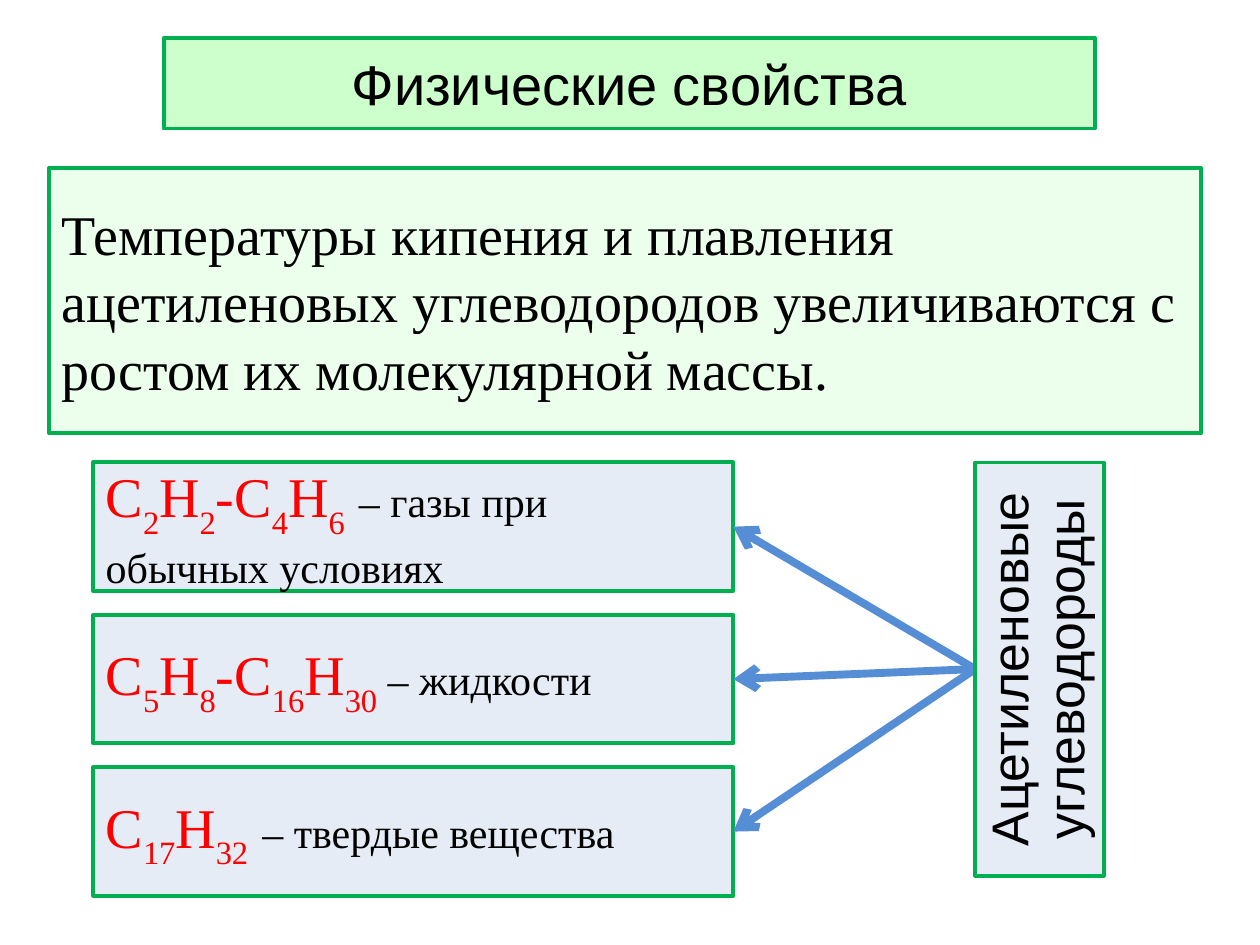
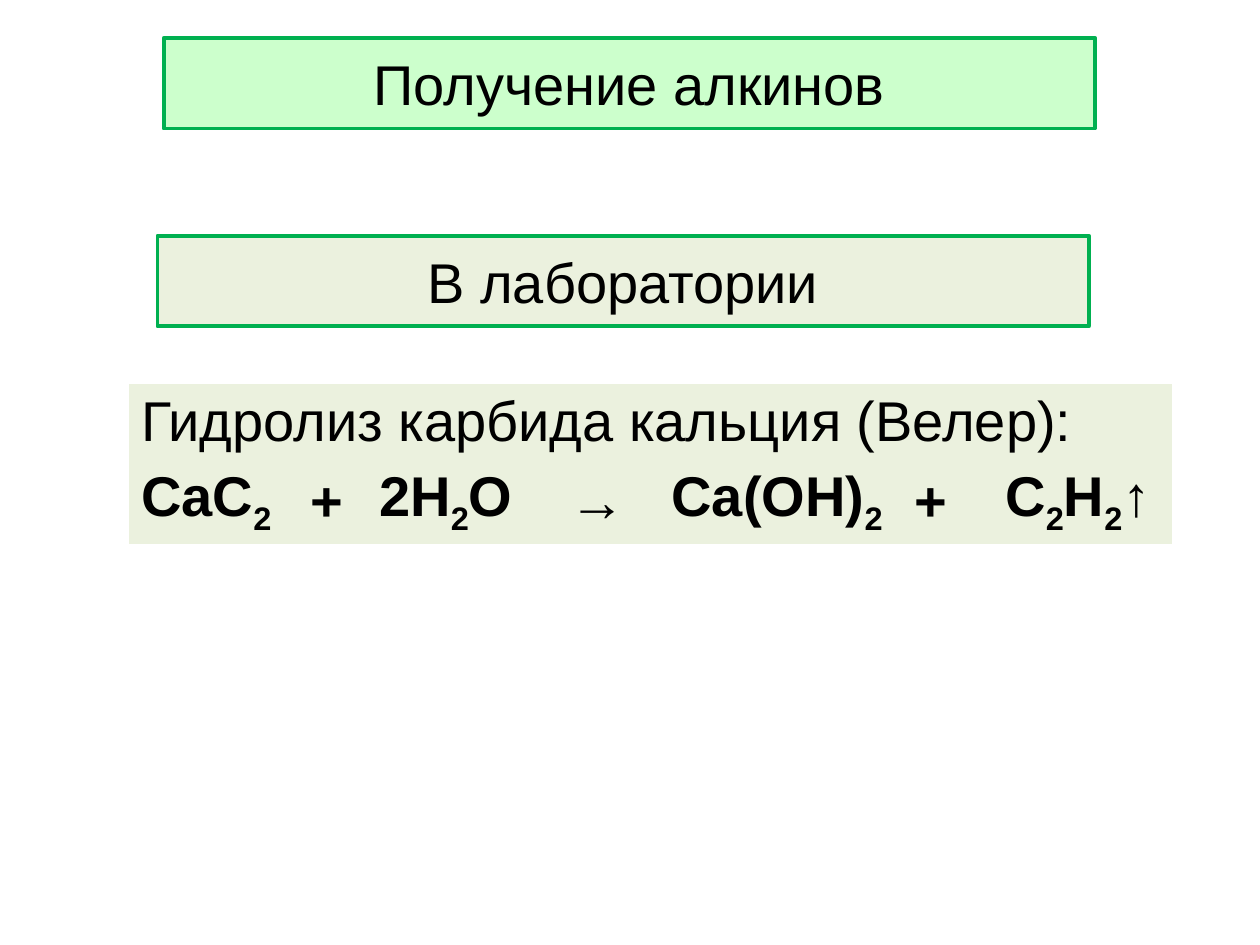
"""Builds two chemistry slides: physical properties and preparation of alkynes."""
from lxml.etree import SubElement
from pptx import Presentation
from pptx.dml.color import RGBColor
from pptx.enum.shapes import MSO_CONNECTOR, MSO_SHAPE
from pptx.enum.text import MSO_ANCHOR, MSO_AUTO_SIZE, PP_ALIGN
from pptx.oxml.ns import qn
from pptx.util import Inches, Pt

COLORS = {
    "text": "000000", "formula": "FF0000", "border": "00B050", "title": "CCFFCC",
    "state": "B9CDE5", "lab": "EBF1DE", "arrow": "558ED5",
}
SANS, SERIF = "Arial", "Times New Roman"
LEFT, CENTER = PP_ALIGN.LEFT, PP_ALIGN.CENTER
NO_GRID_STYLE = "{2D5ABB26-0587-4C30-8999-92F81FD0307C}"

TITLE_BOX = (1.3, 0.3, 7.39, 0.72)
PROPERTIES_TITLE = "Физические свойства"
TREND = "Температуры кипения и плавления ацетиленовых углеводородов увеличиваются с ростом их молекулярной массы."
TREND_BOX = (0.39, 1.33, 9.14, 2.11)

# Underscores enclose subscripts.
STATES = [
    ("С_2_Н_2_-С_4_Н_6_ ", "– газы при обычных условиях"),
    ("С_5_Н_8_-С_16_Н_30_", " – жидкости"),
    ("С_17_Н_32_ ", "– твердые вещества"),
]
STATE_LEFT, STATE_TOP, STATE_WIDTH, STATE_HEIGHT = 0.74, 3.67, 5.08, 1.02
STATE_PITCH, STATE_MARGIN = 1.21, 0.2
FAMILY = "Ацетиленовые углеводороды"
FAMILY_BOX = (6.61, 4.8, 3.28, 1.02)

PREPARATION_TITLE = "Получение алкинов"
LAB = "В лаборатории"
LAB_BOX = (1.25, 1.87, 7.39, 0.72)
METHOD = "Гидролиз карбида кальция (Велер):"
REACTION = [
    ("СaC_2_", 1.26, LEFT), ("+", 0.63, CENTER), ("2H_2_O", 1.34, LEFT),
    ("→", 0.98, CENTER), ("Ca(OH)_2_", 1.93, LEFT), ("+", 0.72, LEFT),
    ("C_2_H_2_", 1.42, LEFT),
]
GAS_SIGN = "↑"
REACTION_LEFT, REACTION_TOP, REACTION_ROW = 1.02, 3.05, 0.47


def rgb(name):
    return RGBColor.from_string(COLORS[name])


def paint(fill, color, opacity=100):
    fill.solid()
    fill.fore_color.rgb = rgb(color)
    if opacity < 100:
        tint = fill._xPr.find(qn("a:solidFill"))[0]
        SubElement(tint, qn("a:alpha"), val=str(opacity * 1000))


def write(paragraph, marked, size=32, font=SANS, color="text", bold=False, drop=30):
    for index, piece in enumerate(marked.split("_")):
        if not piece:
            continue
        run = paragraph.add_run()
        run.text = piece
        look = {"size": Pt(size), "name": font, "bold": bold}
        for attribute, value in look.items():
            setattr(run.font, attribute, value)
        run.font.color.rgb = rgb(color)
        if index % 2:
            run._r.get_or_add_rPr().set("baseline", str(-drop * 1000))


def frame(shape, color, opacity=100, align=LEFT, spacing=1.0, margin=0.1):
    paint(shape.fill, color, opacity)
    shape.line.color.rgb = rgb("border")
    shape.line.width = Pt(2.25)
    layout = {
        "word_wrap": True, "auto_size": MSO_AUTO_SIZE.NONE,
        "vertical_anchor": MSO_ANCHOR.MIDDLE, "margin_right": Inches(margin),
    }
    for attribute, value in layout.items():
        setattr(shape.text_frame, attribute, value)
    paragraph = shape.text_frame.paragraphs[0]
    paragraph.alignment = align
    paragraph.line_spacing = spacing
    return paragraph


def add_box(slide, box, color, **options):
    shape = slide.shapes.add_shape(MSO_SHAPE.RECTANGLE, *map(Inches, box))
    shape.shadow.inherit = False
    return shape, frame(shape, color, **options)


def add_titled_slide(deck, heading):
    slide = deck.slides.add_slide(deck.slide_layouts[5])
    title = slide.shapes.title
    for side, length in zip(("left", "top", "width", "height"), TITLE_BOX):
        setattr(title, side, Inches(length))
    write(frame(title, "title", align=CENTER), heading)
    return slide


def add_arrow(slide, start, end):
    arrow = slide.shapes.add_connector(MSO_CONNECTOR.STRAIGHT, *map(Inches, start + end))
    arrow.line.color.rgb = rgb("arrow")
    arrow.line.width = Pt(4.5)
    SubElement(arrow.line._get_or_add_ln(), qn("a:tailEnd"), type="arrow")
    SubElement(arrow._element.spPr, qn("a:effectLst"))


def build_properties(deck):
    slide = add_titled_slide(deck, PROPERTIES_TITLE)
    _, trend = add_box(slide, TREND_BOX, "title", opacity=36)
    write(trend, TREND, font=SERIF)

    left, top, width, height = FAMILY_BOX
    hub = (left + (width - height) / 2, top + height / 2)
    for row, (formula, state) in enumerate(STATES):
        state_top = STATE_TOP + row * STATE_PITCH
        box = (STATE_LEFT, state_top, STATE_WIDTH, STATE_HEIGHT)
        _, line = add_box(slide, box, "state", opacity=36, margin=STATE_MARGIN)
        write(line, formula, font=SERIF, color="formula")
        write(line, state, size=24, font=SERIF)
        add_arrow(slide, hub, (STATE_LEFT + STATE_WIDTH, state_top + STATE_HEIGHT / 2))

    family, name = add_box(slide, FAMILY_BOX, "state", opacity=36, align=CENTER, spacing=0.9)
    family.rotation = 270
    write(name, FAMILY, size=29.6)


def build_preparation(deck):
    slide = add_titled_slide(deck, PREPARATION_TITLE)
    _, lab = add_box(slide, LAB_BOX, "lab", align=CENTER)
    write(lab, LAB)

    total = sum(width for _, width, _ in REACTION)
    area = (REACTION_LEFT, REACTION_TOP, total, 2 * REACTION_ROW)
    table = slide.shapes.add_table(2, len(REACTION), *map(Inches, area)).table
    table._tbl.tblPr.find(qn("a:tableStyleId")).text = NO_GRID_STYLE
    for cell in table.iter_cells():
        paint(cell.fill, "lab")
        cell.vertical_anchor = MSO_ANCHOR.MIDDLE
    method = table.cell(0, 0)
    method.merge(table.cell(0, len(REACTION) - 1))
    write(method.text_frame.paragraphs[0], METHOD)
    for column, (term, width, align) in enumerate(REACTION):
        table.columns[column].width = Inches(width)
        product = table.cell(1, column).text_frame.paragraphs[0]
        product.alignment = align
        write(product, term, bold=True, drop=25)
    write(product, GAS_SIGN, font=SERIF, bold=True)


def main():
    deck = Presentation()
    deck.slide_width, deck.slide_height = Inches(10), Inches(7.5)
    build_properties(deck)
    build_preparation(deck)
    deck.save("out.pptx")


if __name__ == "__main__":
    main()
